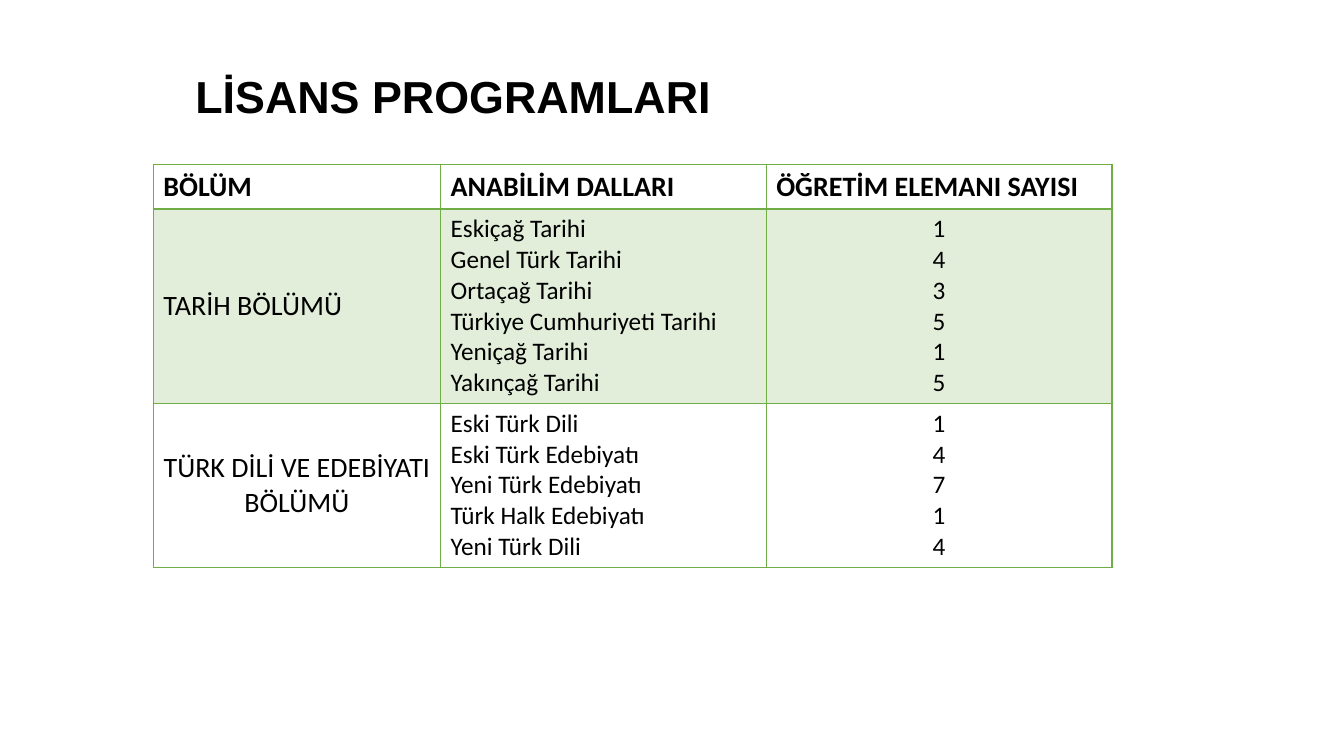
from lxml.etree import SubElement
from pptx import Presentation
from pptx.dml.color import RGBColor
from pptx.enum.text import MSO_ANCHOR as Anchor, PP_ALIGN as Align
from pptx.oxml.ns import qn
from pptx.util import Pt

HEADERS = ["BÖLÜM", "ANABİLİM DALLARI", "ÖĞRETİM ELEMANI SAYISI"]
HISTORY = {
    "Eskiçağ Tarihi": 1,
    "Genel Türk Tarihi": 4,
    "Ortaçağ Tarihi": 3,
    "Türkiye Cumhuriyeti Tarihi": 5,
    "Yeniçağ Tarihi": 1,
    "Yakınçağ Tarihi": 5,
}
LITERATURE = {
    "Eski Türk Dili": 1,
    "Eski Türk Edebiyatı": 4,
    "Yeni Türk Edebiyatı": 7,
    "Türk Halk Edebiyatı": 1,
    "Yeni Türk Dili": 4,
}
DEPARTMENTS = [
    ("TARİH BÖLÜMÜ", Align.LEFT, HISTORY, True),
    ("TÜRK DİLİ VE EDEBİYATI BÖLÜMÜ", Align.CENTER, LITERATURE, False),
]


def color(value):
    return RGBColor.from_string(value)


class ProgramSlide:
    ink = "000000"
    green = "70AD47"
    title_font = "Arial"
    table_font = "Calibri"

    def __init__(self, deck):
        self.page = deck.slides.add_slide(deck.slide_layouts[6])

    def fill_text(self, frame, lines, size, font, bold=False, align=Align.LEFT):
        frame.text = "\n".join(lines)
        for para in frame.paragraphs:
            para.alignment = align
            para.font.size = Pt(size)
            para.font.name = font
            para.font.bold = bold
            para.font.color.rgb = color(self.ink)

    def title(self, text, left, top, width, height):
        box = self.page.shapes.add_textbox(Pt(left), Pt(top), Pt(width), Pt(height))
        box.text_frame.word_wrap = True
        self.fill_text(box.text_frame, [text], 32, self.title_font, bold=True)

    def table(self, left, top, widths, heights):
        frame = self.page.shapes.add_table(
            len(heights), len(widths), Pt(left), Pt(top), Pt(sum(widths)), Pt(sum(heights)))
        table = frame.table
        table.first_row = table.horz_banding = False
        for column, width in zip(table.columns, widths):
            column.width = Pt(width)
        for row, height in zip(table.rows, heights):
            row.height = Pt(height)
        return table

    def border(self, cell, side, width):
        line = SubElement(cell._tc.get_or_add_tcPr(), qn(f"a:ln{side}"), w=str(Pt(width)))
        SubElement(SubElement(line, qn("a:solidFill")), qn("a:srgbClr"), val=self.green)

    def cell(self, cell, lines, size=18, bold=False, align=Align.LEFT,
             anchor=Anchor.TOP, shaded=False, top=1, bottom=1):
        self.fill_text(cell.text_frame, lines, size, self.table_font, bold, align)
        cell.vertical_anchor = anchor
        for side, width in zip("LRTB", (1, 1, top, bottom)):
            self.border(cell, side, width)
        if not shaded:
            cell.fill.background()
            return
        cell.fill.solid()
        cell.fill.fore_color.rgb = color(self.green)
        tint = cell._tc.tcPr.find(f"{qn('a:solidFill')}/{qn('a:srgbClr')}")
        SubElement(tint, qn("a:alpha"), val="20000")


def main():
    deck = Presentation()
    deck.slide_width, deck.slide_height = Pt(960), Pt(540)
    slide = ProgramSlide(deck)
    table = slide.table(109.5, 117.4, [205.2, 232.6, 247], [31.6, 139, 117])
    for column, header in enumerate(HEADERS):
        slide.cell(table.cell(0, column), [header], 20, bold=True, bottom=2)
    for row, (name, align, branches, shaded) in enumerate(DEPARTMENTS, 1):
        style = {"shaded": shaded, "top": 2 if row == 1 else 1}
        slide.cell(table.cell(row, 0), [name], 20, align=align, anchor=Anchor.MIDDLE, **style)
        slide.cell(table.cell(row, 1), branches, **style)
        slide.cell(table.cell(row, 2), map(str, branches.values()), align=Align.CENTER, **style)
    slide.title("LİSANS PROGRAMLARI", 132.5, 45.4, 605.5, 46)
    deck.save("out.pptx")


if __name__ == "__main__":
    main()
